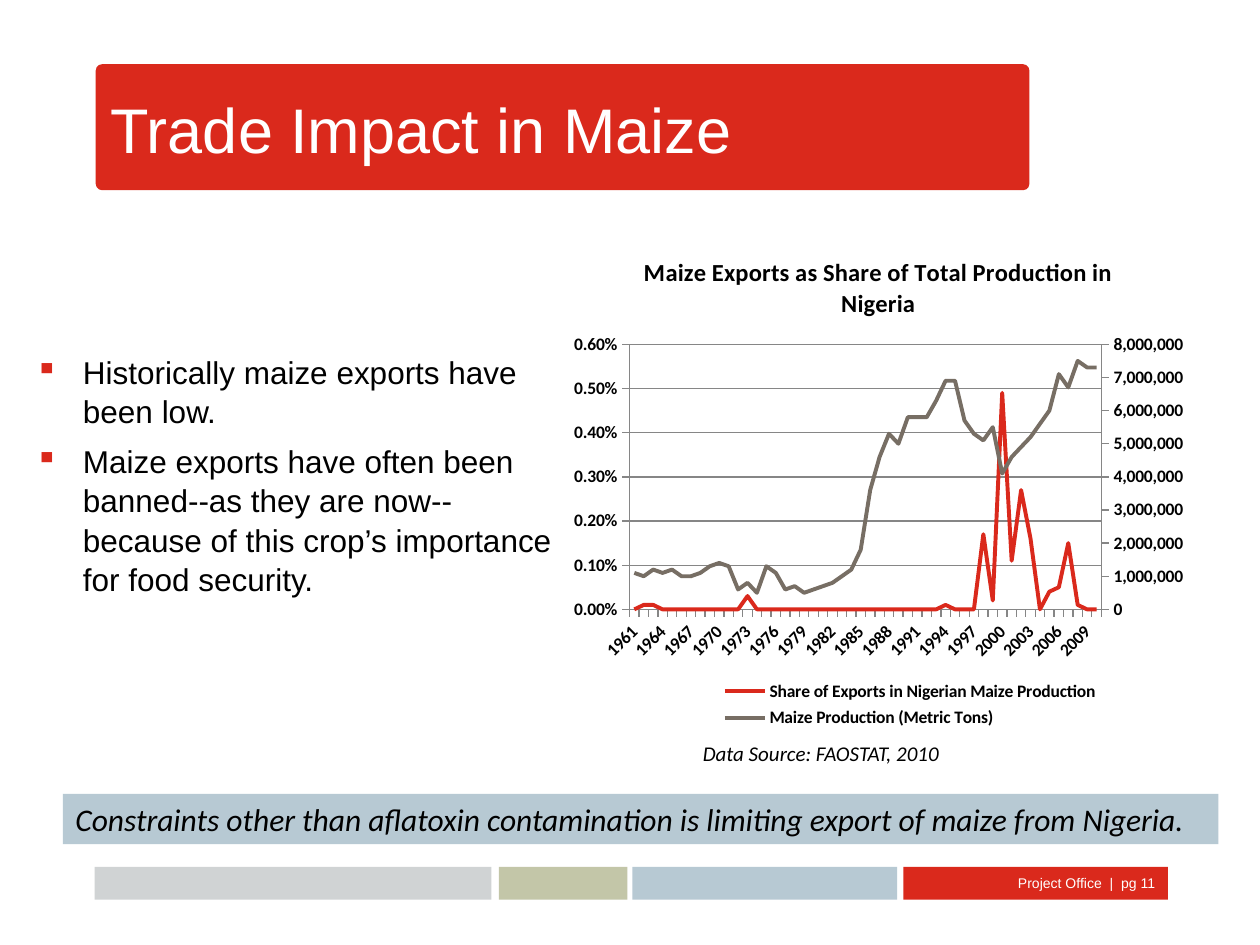
from dataclasses import dataclass
from typing import NamedTuple

from lxml import etree
from pptx import Presentation
from pptx import util as u
from pptx.chart import data as chart_data
from pptx.dml.color import RGBColor
from pptx.enum import chart as ch, shapes, text
from pptx.oxml import parse_xml
from pptx.oxml.ns import nsdecls, qn


@dataclass(frozen=True)
class Theme:
    red: str = "DA291C"
    grey: str = "D0D3D4"
    olive: str = "C3C6A8"
    blue: str = "B7C9D3"
    taupe: str = "776E64"
    grid: str = "868686"
    black: str = "000000"
    white: str = "FFFFFF"
    heading_font: str = "Arial"
    chart_font: str = "Calibri"
    title_size: int = 36
    body_size: int = 18
    chart_title_size: int = 14
    source_size: int = 12
    chart_size: int = 10
    footer_size: int = 8


class Box(NamedTuple):
    left: float
    top: float
    width: float
    height: float

    def lengths(self) -> list:
        return [u.Inches(value) for value in self]


class Panel(NamedTuple):
    box: Box
    colour: str
    corner: float = 0


THEME = Theme()
FOOTER_TOP, FOOTER_HEIGHT = 6.88, 0.26
YEARS = range(1961, 2011)
# Export share in hundredths of a percent; every other year rounds to zero
EXPORT_SHARE = {1962: 1, 1963: 1, 1973: 3, 1994: 1, 1998: 17, 1999: 2, 2000: 49, 2001: 11,
                2002: 27, 2003: 16, 2005: 4, 2006: 5, 2007: 15, 2008: 1}
# Production in units of 100,000 metric tons, from 1961 on
PRODUCTION = [11, 10, 12, 11, 12, 10, 10, 11, 13, 14, 13, 6, 8, 5, 13, 11, 6,
              7, 5, 6, 7, 8, 10, 12, 18, 36, 46, 53, 50, 58, 58, 58, 63, 69,
              69, 57, 53, 51, 55, 41, 46, 49, 52, 56, 60, 71, 67, 75, 73, 73]


def rgb(colour: str) -> RGBColor:
    return RGBColor.from_string(colour)


def style_font(font, size, name, colour=THEME.black, bold=False, italic=False) -> None:
    font.size, font.name = u.Pt(size), name
    font.bold, font.italic = bold, italic
    font.color.rgb = rgb(colour)


def write(frame, *lines: str, size, font, colour=THEME.black, italic=False,
          align=text.PP_ALIGN.LEFT, anchor=text.MSO_ANCHOR.TOP,
          fit=text.MSO_AUTO_SIZE.NONE, bullet=None, gap=0, spacing=None) -> None:
    frame.word_wrap, frame.auto_size, frame.vertical_anchor = True, fit, anchor
    for index, line in enumerate(lines):
        paragraph = frame.add_paragraph() if index else frame.paragraphs[0]
        paragraph.text, paragraph.alignment = line, align
        paragraph.space_before = u.Pt(gap if index else 0)
        if spacing:
            paragraph.line_spacing = spacing
        if bullet:
            props = paragraph._p.get_or_add_pPr()
            props.set("marL", str(u.Inches(0.38)))
            props.set("indent", str(u.Inches(-0.38)))
            colour_tag = etree.SubElement(props, qn("a:buClr"))
            etree.SubElement(colour_tag, qn("a:srgbClr"), val=THEME.red)
            etree.SubElement(props, qn("a:buChar"), char=bullet)
        style_font(paragraph.font, size, font, colour, italic=italic)


def draw_panel(slide, panel: Panel, kind=shapes.MSO_SHAPE.ROUNDED_RECTANGLE):
    shape = slide.shapes.add_shape(kind, *panel.box.lengths())
    if kind == shapes.MSO_SHAPE.ROUNDED_RECTANGLE:
        shape.adjustments[0] = panel.corner
    shape.shadow.inherit = False
    shape.fill.solid()
    shape.fill.fore_color.rgb = rgb(panel.colour)
    shape.line.fill.background()
    return shape


def place(element, target: str, x, y, w, h) -> None:
    """Give a plot area or legend a fixed place, in fractions of the chart."""
    for old in element.findall(qn("c:layout")):
        element.remove(old)
    inner = '<c:layoutTarget val="inner"/>' if target == "plot" else ""
    layout = parse_xml(
        f'<c:layout {nsdecls("c")}><c:manualLayout>{inner}<c:xMode val="edge"/><c:yMode val="edge"/>'
        f'<c:x val="{x}"/><c:y val="{y}"/><c:w val="{w}"/><c:h val="{h}"/></c:manualLayout></c:layout>')
    if target == "plot":
        element.insert(0, layout)
    else:
        element.find(qn("c:legendPos")).addnext(layout)


def move_to_right_axis(chart) -> None:
    """Put the last series in a second line plot with its own value axis."""
    first_plot = chart.plots[0]._element
    second_plot = parse_xml(
        f'<c:lineChart {nsdecls("c")}><c:grouping val="standard"/><c:varyColors val="0"/>'
        '<c:marker val="1"/><c:axId val="5001"/><c:axId val="5002"/></c:lineChart>')
    second_plot.insert(2, first_plot.findall(qn("c:ser"))[-1])
    first_plot.addnext(second_plot)
    value_axis = chart.value_axis._element
    right_axis = parse_xml(
        f'<c:valAx {nsdecls("c", "a")}><c:axId val="5002"/>'
        '<c:scaling><c:orientation val="minMax"/><c:max val="8000000"/><c:min val="0"/></c:scaling>'
        '<c:delete val="0"/><c:axPos val="r"/><c:numFmt formatCode="#,##0" sourceLinked="0"/>'
        '<c:majorTickMark val="out"/><c:minorTickMark val="none"/><c:tickLblPos val="nextTo"/>'
        f'<c:spPr><a:ln w="9525"><a:solidFill><a:srgbClr val="{THEME.grid}"/></a:solidFill></a:ln></c:spPr>'
        f'<c:txPr><a:bodyPr/><a:p><a:pPr><a:defRPr sz="{THEME.chart_size * 100}" b="1"><a:solidFill>'
        f'<a:srgbClr val="{THEME.black}"/></a:solidFill><a:latin typeface="{THEME.chart_font}"/></a:defRPr>'
        '</a:pPr><a:endParaRPr lang="en-US"/></a:p></c:txPr>'
        '<c:crossAx val="5001"/><c:crosses val="max"/><c:majorUnit val="1000000"/></c:valAx>')
    hidden_axis = parse_xml(
        f'<c:catAx {nsdecls("c")}><c:axId val="5001"/><c:scaling><c:orientation val="minMax"/></c:scaling>'
        '<c:delete val="1"/><c:axPos val="b"/><c:crossAx val="5002"/><c:crosses val="autoZero"/></c:catAx>')
    value_axis.addnext(right_axis)
    right_axis.addnext(hidden_axis)


def add_maize_chart(slide, box: Box) -> None:
    figures = chart_data.CategoryChartData()
    figures.categories = [str(year) for year in YEARS]
    figures.add_series("Share of Exports in Nigerian Maize Production",
                       [EXPORT_SHARE.get(year, 0) / 10_000 for year in YEARS], "0.00%")
    figures.add_series("Maize Production (Metric Tons)",
                       [amount * 100_000 for amount in PRODUCTION], "#,##0")
    chart = slide.shapes.add_chart(ch.XL_CHART_TYPE.LINE, *box.lengths(), figures).chart
    style_font(chart.font, THEME.chart_size, THEME.chart_font, bold=True)
    chart.has_title = True
    heading = chart.chart_title.text_frame
    heading.text = "Maize Exports as Share of Total Production in Nigeria"
    style_font(heading.paragraphs[0].runs[0].font, THEME.chart_title_size, THEME.chart_font, bold=True)

    # Lines
    chart.plots[0].vary_by_categories = False
    for series, colour in zip(chart.plots[0].series, (THEME.red, THEME.taupe)):
        series.smooth = False
        series.marker.style = ch.XL_MARKER_STYLE.NONE
        series.format.line.width = u.Pt(2.25)
        series.format.line.color.rgb = rgb(colour)

    # Axes
    years, share = chart.category_axis, chart.value_axis
    for axis in (years, share):
        axis.major_tick_mark = ch.XL_TICK_MARK.OUTSIDE
        axis.format.line.color.rgb = rgb(THEME.grid)
        style_font(axis.tick_labels.font, THEME.chart_size, THEME.chart_font, bold=True)
    years._element.txPr.find(qn("a:bodyPr")).set("rot", "-2700000")
    last_option = years._element.find(qn("c:noMultiLvlLbl"))
    last_option.addprevious(parse_xml(f'<c:tickLblSkip {nsdecls("c")} val="3"/>'))
    share.minimum_scale, share.maximum_scale, share.major_unit = 0, 0.006, 0.001
    share.tick_labels.number_format = "0.00%"
    share.tick_labels.number_format_is_linked = False
    share.major_gridlines.format.line.color.rgb = rgb(THEME.grid)
    move_to_right_axis(chart)

    # Legend and plot places
    chart.has_legend = True
    chart.legend.position = ch.XL_LEGEND_POSITION.BOTTOM
    chart.legend.include_in_layout = False
    style_font(chart.legend.font, THEME.chart_size, THEME.chart_font, bold=True)
    place(chart.legend._element, "legend", 0.2, 0.88, 0.7, 0.12)
    place(chart._chartSpace.chart.plotArea, "plot", 0.11, 0.22, 0.74, 0.53)


def main() -> None:
    deck = Presentation()
    deck.slide_width, deck.slide_height = u.Inches(10), u.Inches(7.5)
    slide = deck.slides.add_slide(deck.slide_layouts[5])

    # Title banner, kept behind the title text
    banner = draw_panel(slide, Panel(Box(0.76, 0.51, 7.41, 1), THEME.red, 0.05))
    title = slide.shapes.title
    title._element.addprevious(banner._element)
    title.left, title.top, title.width, title.height = Box(0.78, 0.51, 7.38, 1.01).lengths()
    write(title.text_frame, "Trade Impact in Maize", size=THEME.title_size,
          font=THEME.heading_font, colour=THEME.white, anchor=text.MSO_ANCHOR.MIDDLE)

    # Footer strip; the last block carries the page label
    for left, width, colour in ((0.75, 3.15, THEME.grey), (3.96, 1.02, THEME.olive),
                                (5.02, 2.1, THEME.blue), (7.17, 2.1, THEME.red)):
        page_label = draw_panel(slide, Panel(Box(left, FOOTER_TOP, width, FOOTER_HEIGHT), colour))
    write(page_label.text_frame, "Project Office  |  pg 11", size=THEME.footer_size,
          font=THEME.heading_font, colour=THEME.white, align=text.PP_ALIGN.RIGHT,
          anchor=text.MSO_ANCHOR.MIDDLE)

    # Findings
    findings = slide.shapes.add_textbox(*Box(0.18, 2.74, 4.42, 3.18).lengths())
    write(findings.text_frame, "Historically maize exports have been low.",
          "Maize exports have often been banned--as they are now-- because of this "
          "crop’s importance for food security.",
          size=THEME.body_size, font=THEME.heading_font, bullet="▪", gap=6, spacing=1.04)

    # Chart, conclusion and source
    add_maize_chart(slide, Box(4.44, 1.86, 5.06, 3.97))
    conclusion = draw_panel(slide, Panel(Box(0.5, 6.3, 9.17, 0.4), THEME.blue),
                            shapes.MSO_SHAPE.RECTANGLE)
    write(conclusion.text_frame,
          "Constraints other than aflatoxin contamination is limiting export of maize from Nigeria.",
          size=THEME.body_size, font=THEME.chart_font, italic=True,
          fit=text.MSO_AUTO_SIZE.SHAPE_TO_FIT_TEXT)
    source = slide.shapes.add_textbox(*Box(5.48, 5.83, 2.86, 0.5).lengths())
    write(source.text_frame, "Data Source: FAOSTAT, 2010", size=THEME.source_size,
          font=THEME.chart_font, italic=True, fit=text.MSO_AUTO_SIZE.SHAPE_TO_FIT_TEXT)

    deck.save("out.pptx")


if __name__ == "__main__":
    main()
